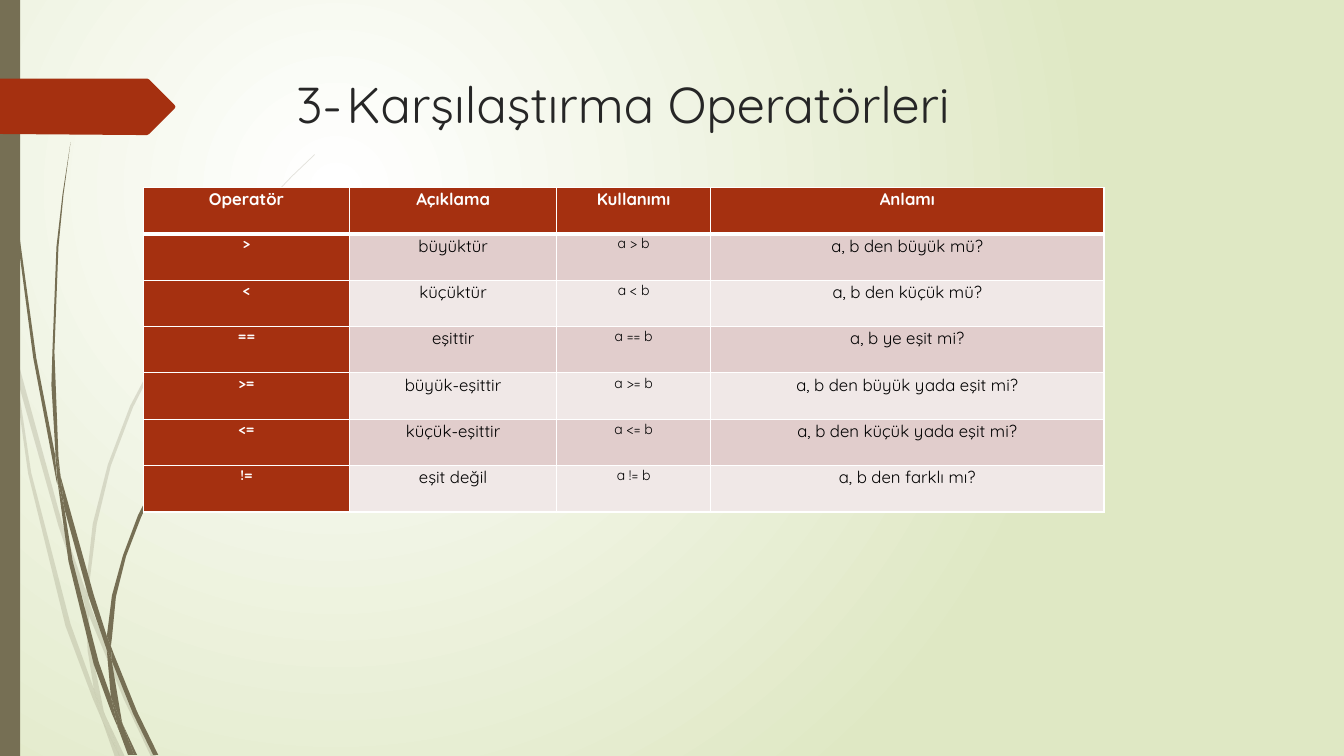
from dataclasses import dataclass

from lxml import etree
from pptx import Presentation
from pptx.dml.color import RGBColor
from pptx.enum.shapes import MSO_SHAPE
from pptx.enum.text import MSO_ANCHOR, PP_ALIGN
from pptx.oxml.ns import qn
from pptx.util import Inches, Pt

RECTANGLE = MSO_SHAPE.RECTANGLE
CENTER = PP_ALIGN.CENTER
TOP = MSO_ANCHOR.TOP

WHITE = RGBColor(0xFF, 0xFF, 0xFF)
BLACK = RGBColor(0x00, 0x00, 0x00)
CHARCOAL = RGBColor(0x26, 0x26, 0x26)
SAGE = RGBColor(0xDF, 0xE8, 0xC4)
OLIVE = RGBColor(0x76, 0x6F, 0x54)
RUST = RGBColor(0xA5, 0x30, 0x10)
ROSE = RGBColor(0xE1, 0xCD, 0xCC)
PALE_ROSE = RGBColor(0xF0, 0xE8, 0xE7)
FONT = "Quicksand"

Points = tuple[tuple[float, float], ...]


@dataclass(frozen=True)
class Grass:
    opacity: int
    blades: tuple[Points, ...]


@dataclass(frozen=True)
class Operator:
    symbol: str
    description: str
    meaning: str


FAINT_GRASS = Grass(20, (
    ((0.11, 3.5), (0.09, 3.22), (0, 2.82), (0, 2.99), (0.1, 3.44)),
    ((0.58, 5.22), (0.84, 5.99), (0.85, 5.86), (0.62, 5.2), (0.14, 3.45), (0.17, 3.76)),
    ((0.92, 6.07), (0.88, 5.96), (0.88, 6.1), (1.23, 6.94), (1.5, 7.51), (1.55, 7.51),
     (1.27, 6.92)),
    ((1.19, 7.51), (1.24, 7.51), (1.05, 7.11)),
    ((0.93, 6.83), (0.7, 6.19), (0.31, 4.69), (0.17, 3.76), (0.11, 3.5), (0.28, 4.7),
     (0.65, 6.21), (0.92, 6.93), (1.01, 7.14), (0.99, 7.07)),
    ((0.84, 5.99), (0.87, 6.46), (0.93, 6.83), (0.96, 6.92), (1.05, 7.11), (1.03, 7.06),
     (0.91, 6.46), (0.88, 6.1), (0.88, 6.08)),
    ((0.88, 5.84), (0.96, 5.2), (1.1, 4.62), (1.32, 4.04), (1.6, 3.49), (1.92, 2.95),
     (2.29, 2.45), (2.68, 1.98), (2.9, 1.75), (3.12, 1.54), (3.12, 1.53), (2.89, 1.75),
     (2.68, 1.97), (2.28, 2.44), (1.9, 2.95), (1.58, 3.48), (1.29, 4.03), (1.07, 4.61),
     (0.92, 5.2), (0.85, 5.84), (0.85, 5.86), (0.88, 5.96)),
    ((1.01, 7.14), (1.14, 7.51), (1.19, 7.51)),
    ((0.88, 6.08), (0.88, 6.1), (0.88, 5.96), (0.85, 5.86), (0.84, 5.99)),
    ((0.96, 6.92), (0.93, 6.83), (0.99, 7.07), (1.01, 7.14), (1.19, 7.51), (1.05, 7.11)),
))
DARK_GRASS = Grass(100, (
    ((0.07, 1.1), (0.17, 2.33), (0.33, 3.55), (0.56, 4.77), (0.57, 4.81), (0.55, 4.57),
     (0.55, 4.53), (0.36, 3.55), (0.19, 2.32), (0.08, 1.09), (0.05, 0.48), (0.04, 0),
     (0.03, 0), (0.04, 0.48)),
    ((0.88, 5.92), (1.06, 6.45), (1.06, 6.33), (1.06, 6.31), (0.93, 5.9), (0.6, 4.72),
     (0.64, 5.05)),
    ((1.13, 6.49), (1.1, 6.41), (1.11, 6.56), (1.32, 7.08), (1.52, 7.49), (1.57, 7.49),
     (1.36, 7.06)),
    ((1.1, 6.91), (0.98, 6.57), (0.72, 5.56), (0.64, 5.05), (0.57, 4.77), (0.68, 5.57),
     (0.93, 6.59), (1.11, 7.08), (1.17, 7.22), (1.16, 7.17)),
    ((0.6, 4.72), (0.58, 4.53), (0.54, 3.49), (0.58, 2.45), (0.63, 1.93), (0.7, 1.41),
     (0.62, 1.93), (0.56, 2.45), (0.52, 3.49), (0.51, 3.82), (0.55, 4.49)),
    ((1.33, 7.49), (1.36, 7.49), (1.22, 7.19)),
    ((0.57, 4.77), (0.64, 5.05), (0.6, 4.72), (0.55, 4.49), (0.55, 4.53)),
    ((1.11, 6.33), (1.15, 5.92), (1.25, 5.52), (1.4, 5.13), (1.58, 4.76), (1.8, 4.4),
     (2.05, 4.06), (2.31, 3.74), (2.45, 3.59), (2.61, 3.44), (2.6, 3.44), (2.45, 3.58),
     (2.31, 3.73), (2.04, 4.05), (1.78, 4.38), (1.56, 4.74), (1.37, 5.11), (1.22, 5.51),
     (1.11, 5.91), (1.06, 6.31), (1.1, 6.41)),
    ((1.17, 7.22), (1.27, 7.49), (1.31, 7.49)),
    ((1.06, 6.45), (1.1, 6.91), (1.16, 7.06), (1.22, 7.19), (1.21, 7.16), (1.11, 6.56),
     (1.09, 6.51)),
    ((1.06, 6.45), (1.09, 6.51), (1.11, 6.56), (1.1, 6.41), (1.06, 6.31), (1.06, 6.33)),
    ((1.16, 7.06), (1.1, 6.91), (1.16, 7.17), (1.17, 7.22), (1.3, 7.49), (1.33, 7.49),
     (1.22, 7.19)),
))
ARROW_TAG: Points = (
    (0, 0.78), (1.46, 0.78), (1.48, 0.79), (1.73, 1.04), (1.74, 1.06), (1.73, 1.08),
    (1.48, 1.33), (1.46, 1.34), (1.36, 1.34), (0, 1.33),
)

HEADINGS = ("Operatör", "Açıklama", "Kullanımı", "Anlamı")
OPERATORS = (
    Operator(">", "büyüktür", "a, b den büyük mü?"),
    Operator("<", "küçüktür", "a, b den küçük mü?"),
    Operator("==", "eşittir", "a, b ye eşit mi?"),
    Operator(">=", "büyük-eşittir", "a, b den büyük yada eşit mi?"),
    Operator("<=", "küçük-eşittir", "a, b den küçük yada eşit mi?"),
    Operator("!=", "eşit değil", "a, b den farklı mı?"),
)
COLUMN_WIDTHS = (2.05, 2.05, 1.53, 3.9)
ROW_HEIGHT = 0.46
CELL_FORMAT = {
    "margin_left": Inches(0.07), "margin_right": Inches(0.07),
    "margin_top": 0, "margin_bottom": 0, "vertical_anchor": TOP,
}


def apply_format(target, values: dict) -> None:
    for name, value in values.items():
        setattr(target, name, value)


def write(paragraph, text: str, size: int, color: RGBColor, bold: bool = False) -> None:
    run = paragraph.add_run()
    run.text = text
    apply_format(run.font, {"name": FONT, "size": Pt(size), "bold": bold})
    run.font.color.rgb = color


def paint(shape, color: RGBColor, opacity: int = 100) -> None:
    shape.shadow.inherit = False
    shape.fill.solid()
    shape.fill.fore_color.rgb = color
    shape.line.fill.background()
    if opacity < 100:
        tone = shape.fill._xPr.find(".//" + qn("a:srgbClr"))
        etree.SubElement(tone, qn("a:alpha"), val=str(opacity * 1000))


def draw_outline(shapes, points: Points, color: RGBColor, opacity: int = 100) -> None:
    start, *rest = [(Inches(x), Inches(y)) for x, y in points]
    builder = shapes.build_freeform(*start)
    builder.add_line_segments(rest, close=True)
    paint(builder.convert_to_shape(), color, opacity)


def draw_background(slide) -> None:
    fill = slide.background.fill
    fill.gradient()
    for stop, color in zip(fill.gradient_stops, (WHITE, SAGE)):
        stop.color.rgb = color
    gradient = slide._element.find(".//" + qn("a:gradFill"))
    gradient.remove(gradient.find(qn("a:lin")))
    glow = etree.SubElement(gradient, qn("a:path"), {"path": "circle"})
    etree.SubElement(glow, qn("a:fillToRect"), l="50000", t="50000", r="100000", b="100000")


def draw_title(slide) -> None:
    title = slide.shapes.add_textbox(Inches(2.84), Inches(0.68), Inches(9.75), Inches(1.4))
    apply_format(title.text_frame, {"word_wrap": True, "vertical_anchor": TOP})
    paragraph = title.text_frame.paragraphs[0]
    tabs = etree.SubElement(paragraph._p.get_or_add_pPr(), qn("a:tabLst"))
    etree.SubElement(tabs, qn("a:tab"), pos=str(Inches(0.5)), algn="l")
    write(paragraph, "3-\tKarşılaştırma Operatörleri", 36, CHARCOAL)


def draw_borders(cell, row: int) -> None:
    widths = {"L": 1, "R": 1, "T": 3 if row == 1 else 1, "B": 3 if row == 0 else 1}
    for side, width in widths.items():
        border = etree.SubElement(
            cell._tc.get_or_add_tcPr(), qn(f"a:ln{side}"), w=str(Pt(width)))
        ink = etree.SubElement(border, qn("a:solidFill"))
        etree.SubElement(ink, qn("a:srgbClr"), val=str(WHITE))


def draw_operator_table(slide) -> None:
    rows = [HEADINGS] + [
        (op.symbol, op.description, f"a {op.symbol} b", op.meaning) for op in OPERATORS]
    table = slide.shapes.add_table(
        len(rows), len(HEADINGS), Inches(1.42), Inches(1.86),
        Inches(sum(COLUMN_WIDTHS)), Inches(ROW_HEIGHT * len(rows))).table
    for column, width in zip(table.columns, COLUMN_WIDTHS):
        column.width = Inches(width)
    for r, texts in enumerate(rows):
        table.rows[r].height = Inches(ROW_HEIGHT)
        for c, text in enumerate(texts):
            cell = table.cell(r, c)
            heading = r == 0 or c == 0
            apply_format(cell, CELL_FORMAT)
            draw_borders(cell, r)
            cell.fill.solid()
            cell.fill.fore_color.rgb = RUST if heading else ROSE if r % 2 else PALE_ROSE
            paragraph = cell.text_frame.paragraphs[0]
            apply_format(paragraph, {"alignment": CENTER, "line_spacing": 1.07})
            size = 10 if r and c in (0, 2) else 12
            write(paragraph, text, size, WHITE if heading else BLACK, heading)


def main() -> None:
    deck = Presentation()
    deck.slide_width, deck.slide_height = Inches(13.33), Inches(7.5)
    slide = deck.slides.add_slide(deck.slide_layouts[6])
    draw_background(slide)
    for grass in (FAINT_GRASS, DARK_GRASS):
        tuft = slide.shapes.add_group_shape()
        for blade in grass.blades:
            draw_outline(tuft.shapes, blade, OLIVE, grass.opacity)
    paint(slide.shapes.add_shape(RECTANGLE, 0, 0, Inches(0.2), Inches(7.5)), OLIVE)
    draw_outline(slide.shapes, ARROW_TAG, RUST)
    draw_title(slide)
    draw_operator_table(slide)
    deck.save("out.pptx")


if __name__ == "__main__":
    main()
